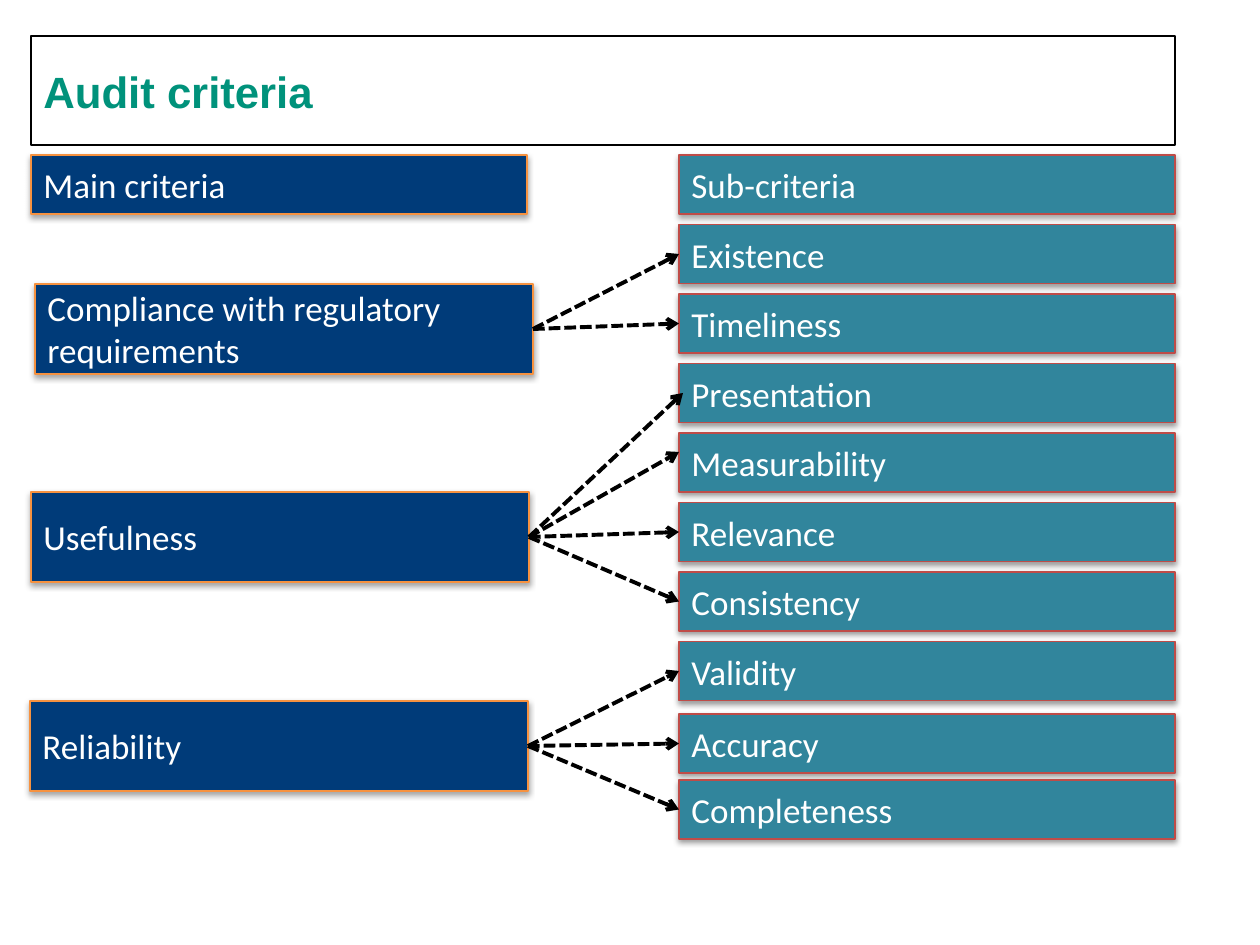
"""Build the audit criteria slide, linking main criteria to their sub-criteria."""
from lxml import etree
from pptx import Presentation
from pptx.dml.color import RGBColor
from pptx.enum.dml import MSO_LINE
from pptx.enum.shapes import MSO_CONNECTOR, MSO_SHAPE
from pptx.enum.text import MSO_ANCHOR, PP_ALIGN
from pptx.oxml.ns import qn
from pptx.util import Emu, Pt

RECTANGLE = MSO_SHAPE.RECTANGLE
STRAIGHT = MSO_CONNECTOR.STRAIGHT
DASH = MSO_LINE.SQUARE_DOT
MIDDLE = MSO_ANCHOR.MIDDLE
LEFT = PP_ALIGN.LEFT
NAVY = RGBColor(0x00, 0x3B, 0x79)
ORANGE = RGBColor(0xF6, 0x92, 0x40)
TEAL = RGBColor(0x31, 0x85, 0x9C)
RED = RGBColor(0xBF, 0x4C, 0x48)
GREEN = RGBColor(0x00, 0x92, 0x7B)
WHITE = RGBColor(0xFF, 0xFF, 0xFF)
BLACK = RGBColor(0x00, 0x00, 0x00)
LEFT_SIDE, RIGHT_SIDE = 1, 3
SUB_LEFT, SUB_WIDTH, ROW_HEIGHT = 679, 496, 59
FIRST_TOP, ROW_STEP = 155, 69.5


def px(value):
    return Emu(round(value * 914400 / 126))


def add_box(text, bounds, fill, line, shadow=None, font=("Calibri", 20, WHITE)):
    shape = slide.shapes.add_shape(RECTANGLE, *map(px, bounds))
    shape.shadow.inherit = False
    if fill is None:
        shape.fill.background()
    else:
        shape.fill.solid()
        shape.fill.fore_color.rgb = fill
    shape.line.color.rgb = line
    shape.line.width = Pt(0.75)
    if shadow:
        distance, alpha = shadow
        effects = shape._element.spPr.find(qn("a:effectLst"))
        outer = etree.SubElement(effects, qn("a:outerShdw"), blurRad="40000",
                                 dist=str(distance), dir="5400000", rotWithShape="0")
        color = etree.SubElement(outer, qn("a:srgbClr"), val="000000")
        etree.SubElement(color, qn("a:alpha"), val=str(alpha))
    frame = shape.text_frame
    frame.text = text
    frame.word_wrap = True
    frame.vertical_anchor = MIDDLE
    paragraph = frame.paragraphs[0]
    paragraph.alignment = LEFT
    run_font = paragraph.runs[0].font
    run_font.name, run_font.size, run_font.color.rgb = font[0], Pt(font[1]), font[2]
    return shape


presentation = Presentation()
presentation.slide_width = px(1260)
presentation.slide_height = px(945)
slide = presentation.slides.add_slide(presentation.slide_layouts[6])

HEADER_SHADOW = (23000, 35000)
SUB_SHADOW = (20000, 38000)
add_box("Main criteria", (31, FIRST_TOP, 496, ROW_HEIGHT), NAVY, ORANGE, HEADER_SHADOW)
add_box("Sub-criteria", (SUB_LEFT, FIRST_TOP, SUB_WIDTH, ROW_HEIGHT), TEAL, RED, HEADER_SHADOW)

criteria = [
    ("Compliance with regulatory requirements", 35, 284, ["Existence", "Timeliness"]),
    ("Usefulness", 31, 492, ["Presentation", "Measurability", "Relevance", "Consistency"]),
    ("Reliability", 30, 701, ["Validity", "Accuracy", "Completeness"]),
]
shifted_tops = {"Accuracy": 714, "Completeness": 780}
shifted_arrow_ends = {"Presentation": (683, 393), "Measurability": (679, 452)}

row = 0
for main_name, left, top, sub_names in criteria:
    main_box = add_box(main_name, (left, top, 498, 90), NAVY, ORANGE, HEADER_SHADOW)
    for sub_name in sub_names:
        row += 1
        sub_top = shifted_tops.get(sub_name, FIRST_TOP + ROW_STEP * row)
        sub_box = add_box(sub_name, (SUB_LEFT, sub_top, SUB_WIDTH, ROW_HEIGHT),
                          TEAL, RED, SUB_SHADOW)
        end = shifted_arrow_ends.get(sub_name, (SUB_LEFT, sub_top + ROW_HEIGHT / 2))
        arrow = slide.shapes.add_connector(STRAIGHT, px(left + 498), px(top + 45), *map(px, end))
        arrow.begin_connect(main_box, RIGHT_SIDE)
        if sub_name not in shifted_arrow_ends:
            arrow.end_connect(sub_box, LEFT_SIDE)
        arrow.line.color.rgb = BLACK
        arrow.line.width = Pt(2.25)
        arrow.line.dash_style = DASH
        etree.SubElement(arrow.line._get_or_add_ln(), qn("a:tailEnd"), type="arrow")
        etree.SubElement(arrow._element.spPr, qn("a:effectLst"))

title = add_box("Audit criteria", (31, 36, 1144, 109), None, BLACK, font=("Arial", 25, GREEN))
title.text_frame.paragraphs[0].runs[0].font.bold = True

presentation.save("out.pptx")
